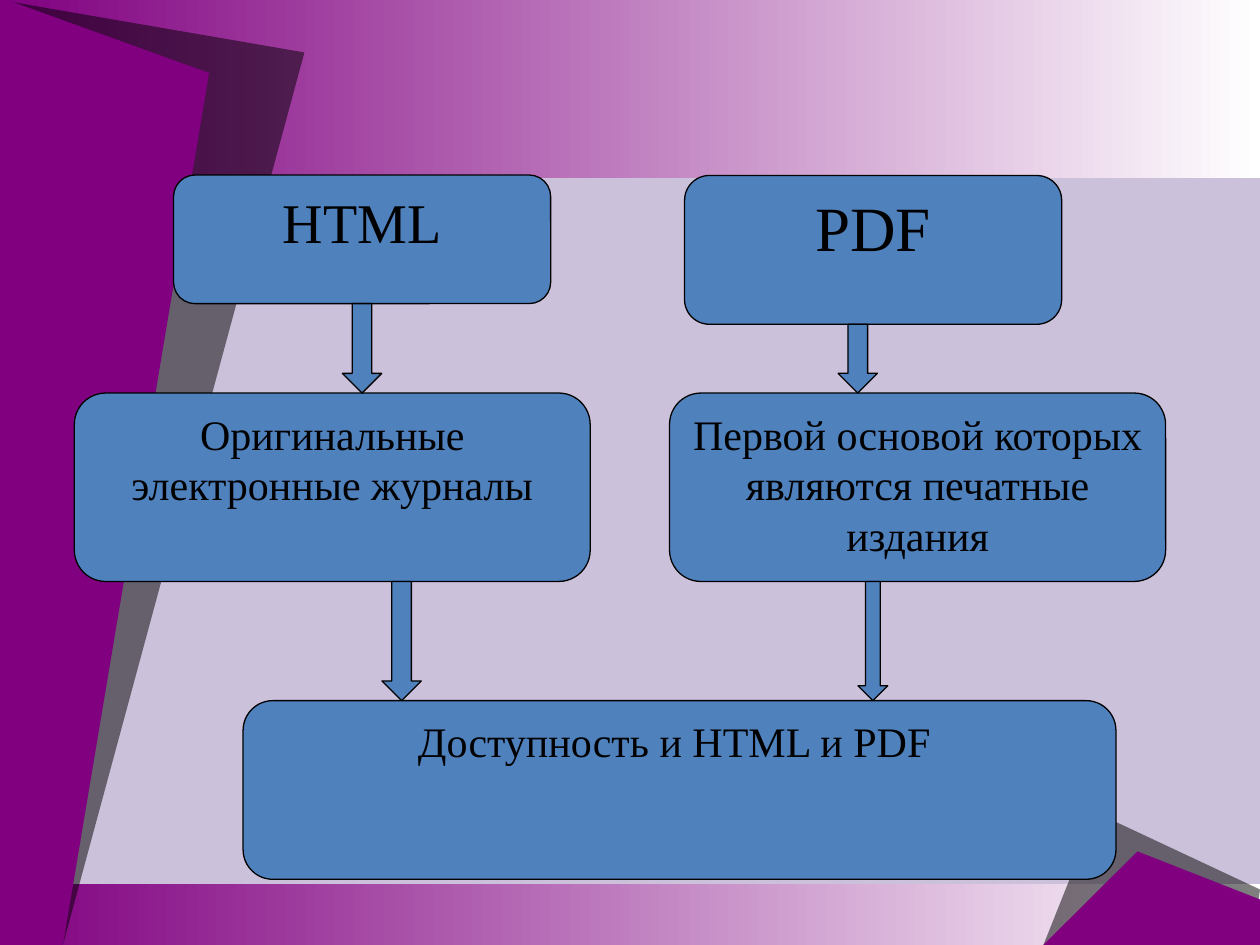
from dataclasses import dataclass

from lxml.etree import SubElement
from pptx import Presentation
from pptx.dml.color import RGBColor
from pptx.enum.shapes import MSO_SHAPE as Shape
from pptx.enum.text import MSO_ANCHOR as Anchor, PP_ALIGN as Align
from pptx.oxml.ns import qn
from pptx.util import Pt

WIDTH, HEIGHT = 720, 540
FONT = "Times New Roman"
COLORS = {
    "background": "CCC1DA",
    "purple": "800080",
    "white": "FFFFFF",
    "black": "000000",
    "blue": "4F81BD",
}


@dataclass
class Band:
    top: float
    height: float


@dataclass
class Shard:
    points: list[tuple[float, float]]
    color: str
    opacity: int = 100


@dataclass
class Box:
    left: float
    top: float
    width: float
    height: float
    text: str
    size: int = 24

    @property
    def bottom(self) -> float:
        return self.top + self.height


@dataclass
class Arrow:
    center: float
    source: Box
    target: Box
    width: float = 22.5


def rgb(name: str) -> RGBColor:
    return RGBColor.from_string(COLORS[name])


def draw_band(s, band: Band) -> None:
    sp = s.shapes.add_shape(Shape.RECTANGLE, 0, Pt(band.top), Pt(WIDTH), Pt(band.height))
    sp.shadow.inherit = False
    sp.line.fill.background()
    sp.fill.gradient()
    sp.fill.gradient_angle = 0
    for i, (stop, name) in enumerate(zip(sp.fill.gradient_stops, ("purple", "white"))):
        stop.position = i
        stop.color.rgb = rgb(name)


def draw_shard(s, shard: Shard) -> None:
    corners = [(Pt(x), Pt(y)) for x, y in shard.points]
    builder = s.shapes.build_freeform(*corners[0])
    builder.add_line_segments(corners[1:], close=True)
    sp = builder.convert_to_shape()
    sp.shadow.inherit = False
    sp.line.fill.background()
    sp.fill.solid()
    sp.fill.fore_color.rgb = rgb(shard.color)
    if shard.opacity < 100:
        color = sp.fill._xPr.find(qn("a:solidFill"))[0]
        SubElement(color, qn("a:alpha"), val=str(shard.opacity * 1000))


def add_blue_shape(s, kind, left: float, top: float, width: float, height: float):
    sp = s.shapes.add_shape(kind, Pt(left), Pt(top), Pt(width), Pt(height))
    sp.shadow.inherit = False
    sp.fill.solid()
    sp.fill.fore_color.rgb = rgb("blue")
    sp.line.color.rgb = rgb("black")
    sp.line.width = Pt(0.75)
    return sp


def draw_box(s, box: Box) -> None:
    sp = add_blue_shape(s, Shape.ROUNDED_RECTANGLE, box.left, box.top, box.width, box.height)
    tf = sp.text_frame
    tf.word_wrap = True
    tf.vertical_anchor = Anchor.TOP
    p = tf.paragraphs[0]
    p.alignment = Align.CENTER
    r = p.add_run()
    r.text = box.text
    r.font.name = FONT
    r.font.size = Pt(box.size)
    r.font.color.rgb = rgb("black")


def draw_arrow(s, arrow: Arrow) -> None:
    top = arrow.source.bottom
    add_blue_shape(s, Shape.DOWN_ARROW, arrow.center - arrow.width / 2, top,
                   arrow.width, arrow.target.top - top)


def main() -> None:
    prs = Presentation()
    prs.slide_width, prs.slide_height = Pt(WIDTH), Pt(HEIGHT)
    s = prs.slides.add_slide(prs.slide_layouts[6])
    s.background.fill.solid()
    s.background.fill.fore_color.rgb = rgb("background")

    draw_band(s, Band(505, 35))
    draw_shard(s, Shard([(626.4, 464.4), (WIDTH, 508.3), (715.7, HEIGHT), (596.2, HEIGHT)],
                        "black", 50))
    draw_shard(s, Shard([(596.2, HEIGHT), (650, 486.5), (WIDTH, 514), (WIDTH, HEIGHT)],
                        "purple"))
    draw_band(s, Band(0, 102))
    draw_shard(s, Shard([(0, 0), (174, 30), (36, HEIGHT), (0, HEIGHT)], "black", 50))
    draw_shard(s, Shard([(0, -1.5), (119.5, 41.7), (36, HEIGHT), (0, HEIGHT)], "purple"))

    html = Box(99.2, 100, 215.5, 73.5, "HTML", 32)
    pdf = Box(391.2, 100.3, 215.5, 85, "PDF", 36)
    original = Box(42.5, 224.6, 294.8, 107.7, "Оригинальные электронные журналы")
    printed = Box(382.6, 224.6, 283.5, 107.7,
                  "Первой основой которых являются печатные издания")
    access = Box(138.9, 400.4, 498.8, 102.1, "Доступность и HTML и PDF ")
    for box in (html, pdf, original, printed, access):
        draw_box(s, box)

    for arrow in (
        Arrow(206.9, html, original),
        Arrow(490.2, pdf, printed),
        Arrow(229.5, original, access),
        Arrow(498.8, printed, access, 17),
    ):
        draw_arrow(s, arrow)

    prs.save("out.pptx")


if __name__ == "__main__":
    main()
